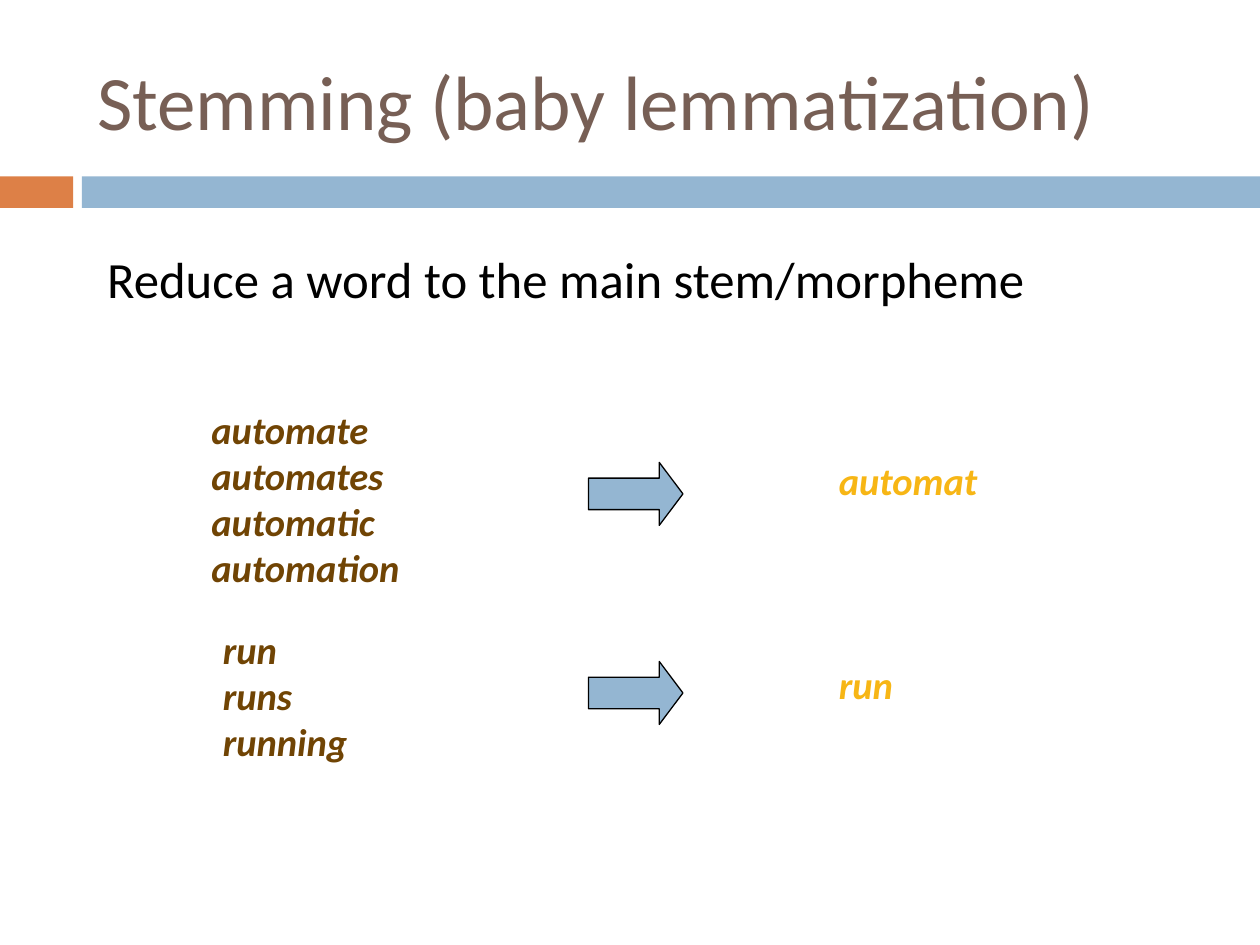
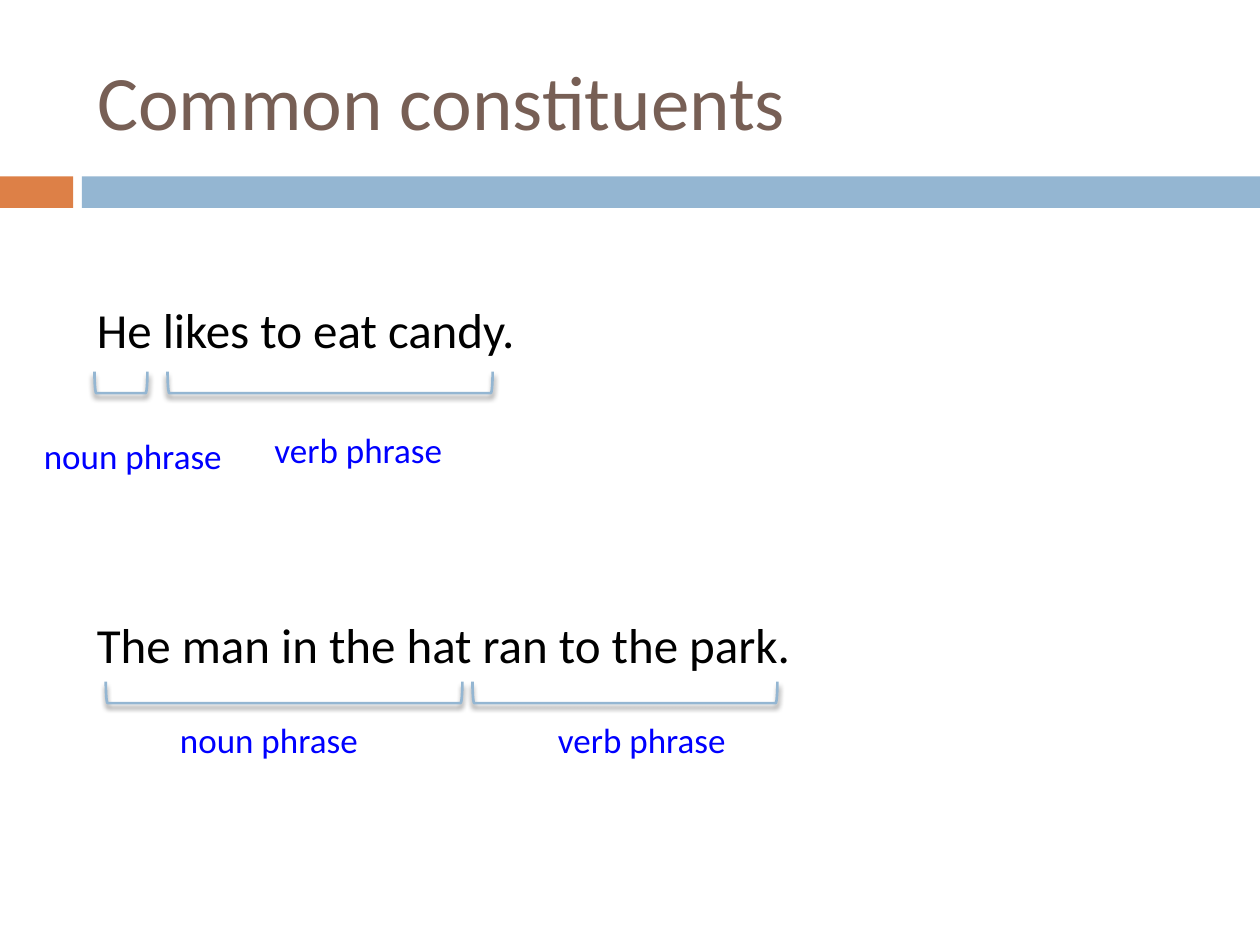
from lxml import etree
from pptx import Presentation
from pptx.dml.color import RGBColor
from pptx.enum.shapes import MSO_SHAPE
from pptx.enum.text import MSO_ANCHOR, MSO_AUTO_SIZE, PP_ALIGN
from pptx.oxml import parse_xml
from pptx.oxml.ns import nsdecls, qn
from pptx.util import Inches, Pt

FONT = "Calibri"
BLACK = RGBColor(0x00, 0x00, 0x00)
ORANGE = RGBColor(0xDD, 0x80, 0x47)
LIGHT_BLUE = RGBColor(0x94, 0xB6, 0xD2)
TITLE_BROWN = RGBColor(0x77, 0x5F, 0x55)
WORD_BROWN = RGBColor(0x70, 0x44, 0x04)
STEM_GOLD = RGBColor(0xF7, 0xB6, 0x15)
LABEL_BLUE = RGBColor(0x00, 0x00, 0xFF)

TITLE_AND_CONTENT, TITLE_ONLY = 1, 5
BANDS = [(0, 0.58, ORANGE), (0.65, 9.35, LIGHT_BLUE)]
BRACKET_DEPTH = 0.17
SHADOW = (
    f'<a:outerShdw {nsdecls("a")} blurRad="38100" dist="30480" dir="5400000" '
    'rotWithShape="0"><a:srgbClr val="000000"><a:alpha val="45000"/>'
    "</a:srgbClr></a:outerShdw>"
)


def write(shape, box, lines, size, color, emphasis=False):
    """Place a text shape and fill it with one paragraph per line."""
    shape.left, shape.top, shape.width, shape.height = map(Inches, box)
    frame = shape.text_frame
    frame.text = "\n".join(lines)
    frame.word_wrap = True
    frame.auto_size = MSO_AUTO_SIZE.NONE
    for paragraph in frame.paragraphs:
        paragraph.alignment = PP_ALIGN.LEFT
        font = paragraph.font
        font.name, font.size, font.color.rgb = FONT, Pt(size), color
        font.bold = font.italic = emphasis
    return frame


def add_titled_slide(layout_index, title):
    """Add a slide with the shared bands and title style."""
    slide = presentation.slides.add_slide(presentation.slide_layouts[layout_index])
    for left, width, color in BANDS:
        band = slide.shapes.add_shape(
            MSO_SHAPE.RECTANGLE, Inches(left), Inches(1.4), Inches(width), Inches(0.25))
        band.shadow.inherit = False
        band.fill.solid()
        band.fill.fore_color.rgb = color
        band.line.fill.background()
    frame = write(slide.shapes.title, (0.67, 0.25, 8.92, 1.08), [title], 44, TITLE_BROWN)
    frame.vertical_anchor = MSO_ANCHOR.MIDDLE
    return slide


presentation = Presentation()
presentation.slide_width = Inches(10)
presentation.slide_height = Inches(7.5)

# Slide 1: stemming
slide = add_titled_slide(TITLE_AND_CONTENT, "Stemming (baby lemmatization)")
body = write(slide.placeholders[1], (0.75, 1.92, 8.5, 0.75),
             ["Reduce a word to the main stem/morpheme"], 29, BLACK)
paragraph = body.paragraphs[0]
paragraph.space_before = Pt(7)
properties = paragraph._p.get_or_add_pPr()
properties.set("marL", "0")
properties.set("indent", "0")
etree.SubElement(properties, qn("a:buNone"))

# Word forms, arrow and resulting stem
stemming_rows = [
    (["automate", "automates", "automatic", "automation"], (1.58, 3.17, 2.01, 1.57),
     3.67, "automat", 3.58),
    (["run", "runs", "running"], (1.67, 4.92, 1.45, 1.2), 5.25, "run", 5.2),
]
for words, words_box, arrow_top, stem, stem_top in stemming_rows:
    write(slide.shapes.add_textbox(0, 0, 0, 0), words_box, words, 22, WORD_BROWN, True)
    arrow = slide.shapes.add_shape(
        MSO_SHAPE.RIGHT_ARROW, Inches(4.67), Inches(arrow_top), Inches(0.75), Inches(0.5))
    arrow.adjustments[0], arrow.adjustments[1] = 0.5, 0.375
    arrow.shadow.inherit = False
    arrow.fill.solid()
    arrow.fill.fore_color.rgb = LIGHT_BLUE
    arrow.line.color.rgb = BLACK
    arrow.line.width = Pt(0.75)
    write(slide.shapes.add_textbox(0, 0, 0, 0), (6.56, stem_top, 1.52, 0.47),
          [stem], 22, STEM_GOLD, True)

# Slide 2: constituents
slide = add_titled_slide(TITLE_ONLY, "Common constituents")

# Each phrase: label, bracket left, bracket span, label left, label top
sentences = [
    ("He likes to eat candy.", 2.33, 2.95,
     [("noun phrase", 0.75, 0.42, 0.25, 3.4), ("verb phrase", 1.33, 2.58, 2.08, 3.35)]),
    ("The man in the hat ran to the park.", 4.83, 5.41,
     [("noun phrase", 0.84, 2.83, 1.33, 5.65), ("verb phrase", 3.75, 2.42, 4.33, 5.65)]),
]
for sentence, sentence_top, bracket_top, phrases in sentences:
    write(slide.shapes.add_textbox(0, 0, 0, 0), (0.67, sentence_top, 7.08, 0.57),
          [sentence], 28, BLACK)
    for label, bracket_left, span, label_left, label_top in phrases:
        # The bracket turns about its centre to lie under the phrase
        shift = (span - BRACKET_DEPTH) / 2
        bracket = slide.shapes.add_shape(
            MSO_SHAPE.LEFT_BRACKET, Inches(bracket_left + shift),
            Inches(bracket_top - shift), Inches(BRACKET_DEPTH), Inches(span))
        bracket.rotation = 270
        bracket.fill.background()
        bracket.line.color.rgb = LIGHT_BLUE
        bracket.line.width = Pt(1.5)
        bracket.shadow.inherit = False
        effects = bracket.element.spPr.find(qn("a:effectLst"))
        effects.append(parse_xml(SHADOW))
        write(slide.shapes.add_textbox(0, 0, 0, 0), (label_left, label_top, 2.17, 0.44),
              [label], 20, LABEL_BLUE)

presentation.save("out.pptx")
